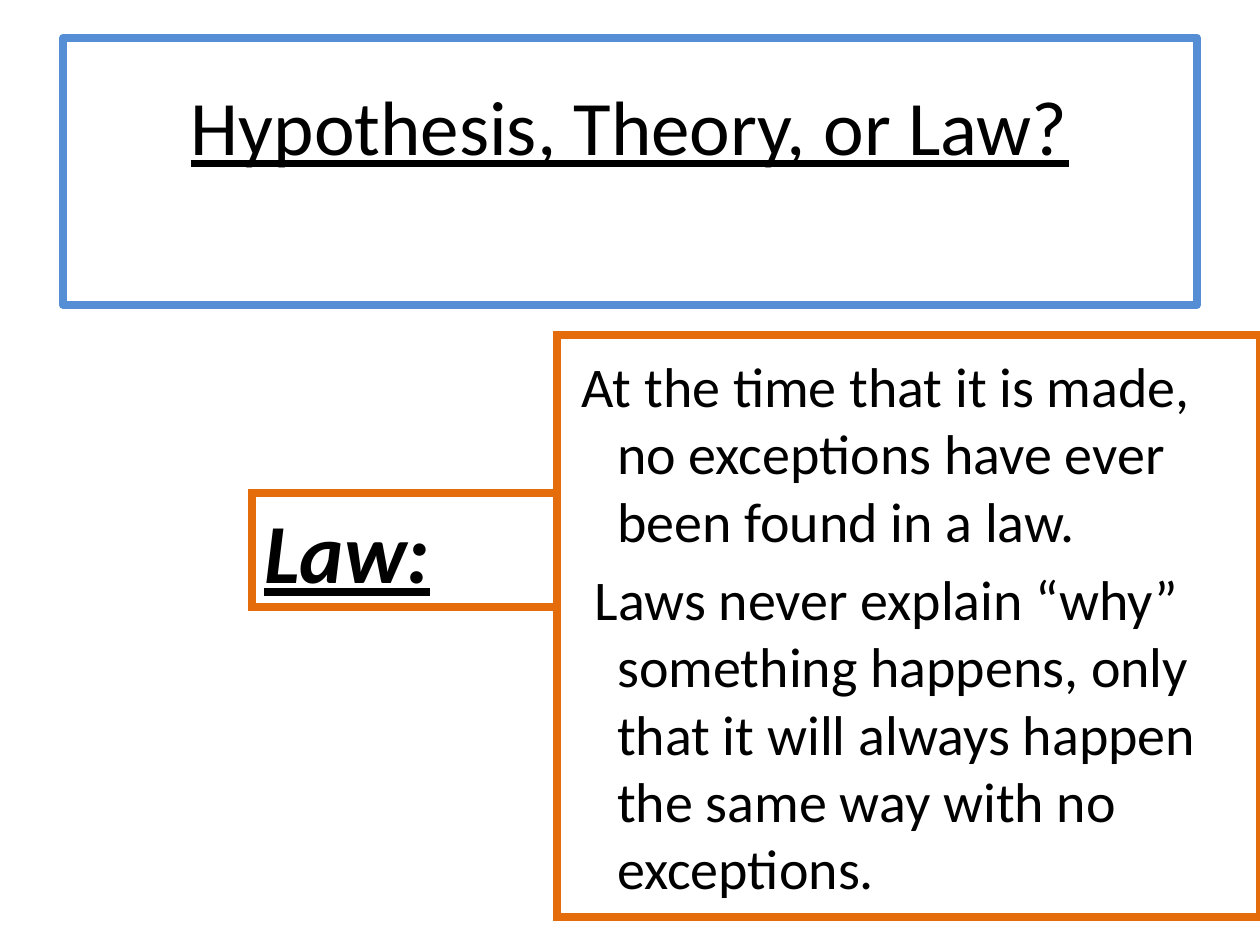
from lxml import etree
from pptx import Presentation
from pptx.dml.color import RGBColor
from pptx.enum.shapes import MSO_SHAPE
from pptx.enum.text import MSO_ANCHOR, PP_ALIGN
from pptx.oxml.ns import qn
from pptx.util import Inches, Pt

RECTANGLE = MSO_SHAPE.RECTANGLE
MIDDLE = MSO_ANCHOR.MIDDLE
LEFT, CENTER = PP_ALIGN.LEFT, PP_ALIGN.CENTER

COLORS = {"paper": "FFFFFF", "text": "000000", "title": "558ED5", "law": "E46C0A"}
FONT = "Calibri"
HANGING = 0.38


def color(name):
    return RGBColor.from_string(COLORS[name])


def add_frame(page, box, outline, join):
    """Add a white rectangle with a thick outline and return its text frame."""
    shape = page.shapes.add_shape(RECTANGLE, *(Inches(length) for length in box))
    shape.shadow.inherit = False
    shape.fill.solid()
    shape.fill.fore_color.rgb = color("paper")
    shape.line.color.rgb = color(outline)
    shape.line.width = Pt(4.5)
    line_join = etree.SubElement(shape.line._ln, qn(f"a:{join}"))
    if join == "miter":
        line_join.set("lim", "800000")
    frame = shape.text_frame
    frame.word_wrap = True
    frame.vertical_anchor = MIDDLE
    return frame


def write(para, text, size, align=LEFT, bold=False, italic=False, underline=False):
    para.alignment = align
    span = para.add_run()
    span.text = text
    font = span.font
    font.name, font.size = FONT, Pt(size)
    font.bold, font.italic, font.underline = bold, italic, underline
    font.color.rgb = color("text")


def hang(para, first_line):
    """Indent wrapped lines, starting the first line at its own offset."""
    properties = para._p.get_or_add_pPr()
    properties.set("marL", str(Inches(HANGING)))
    properties.set("indent", str(Inches(first_line - HANGING)))


def add_title(page, box):
    frame = add_frame(page, box, "title", "round")
    frame.margin_bottom = Inches(0.79)  # lifts the title by half a line
    write(frame.paragraphs[0], "Hypothesis, Theory, or Law?", 44, CENTER, underline=True)


def add_term(page, box):
    frame = add_frame(page, box, "law", "miter")
    para = frame.paragraphs[0]
    hang(para, 0)
    write(para, "Law:", 48, bold=True, italic=True, underline=True)


def add_explanation(page, box, statements):
    frame = add_frame(page, box, "law", "miter")
    for index, (first_line, text) in enumerate(statements):
        para = frame.add_paragraph() if index else frame.paragraphs[0]
        hang(para, first_line)
        if index:
            para.space_before = Pt(6.4)
        write(para, text, 32)


def main():
    deck = Presentation()
    deck.slide_width, deck.slide_height = Inches(10), Inches(7.5)
    page = deck.slides.add_slide(deck.slide_layouts[6])
    add_title(page, (0.5, 0.3, 9, 2.12))
    add_term(page, (2, 3.91, 3, 0.91))
    add_explanation(page, (4.42, 2.66, 5.58, 4.62), [
        (0.1, "At the time that it is made, no exceptions have ever been found in a law."),
        (0.2, "Laws never explain “why” something happens, only that it will always "
              "happen the same way with no exceptions."),
    ])
    deck.save("out.pptx")


if __name__ == "__main__":
    main()
